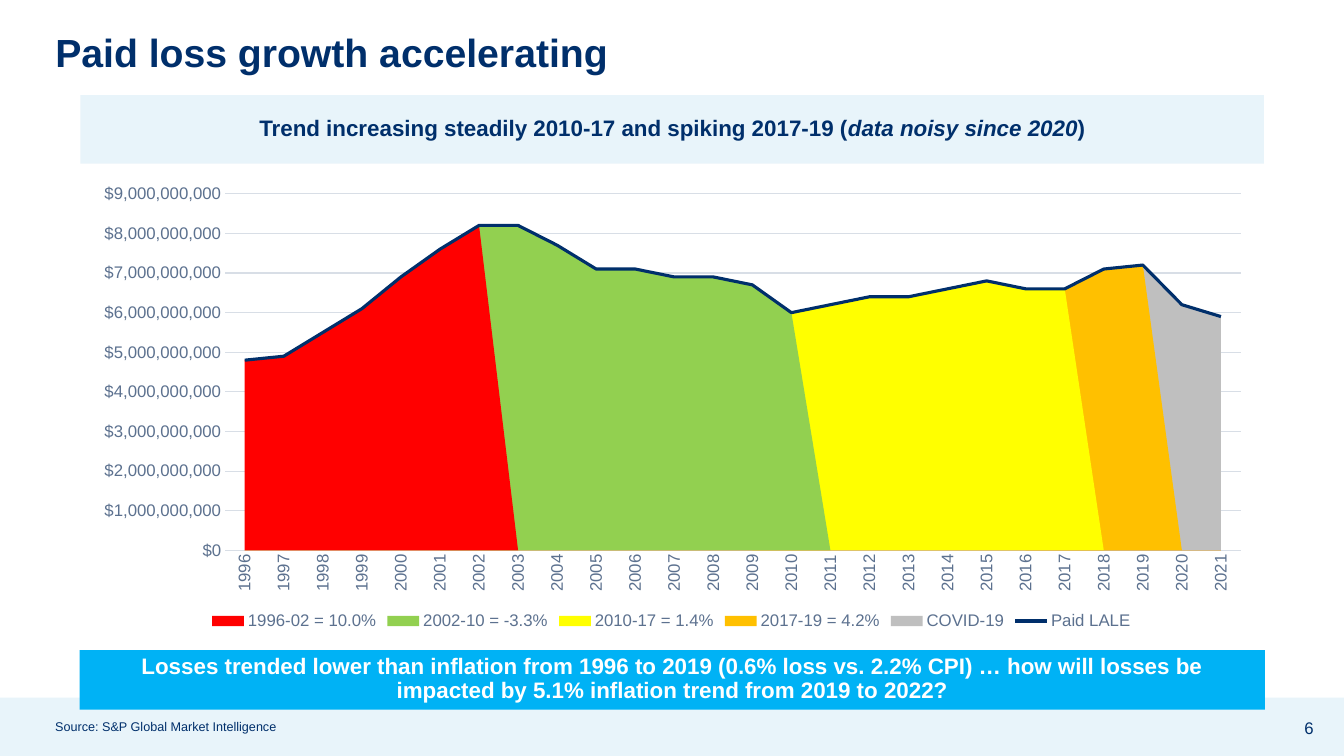
from lxml import etree
from pptx import Presentation
from pptx.chart.data import CategoryChartData
from pptx.dml.color import RGBColor
from pptx.enum.chart import XL_CHART_TYPE, XL_LEGEND_POSITION, XL_MARKER_STYLE, XL_TICK_MARK
from pptx.enum.shapes import MSO_SHAPE
from pptx.enum.text import MSO_ANCHOR, PP_ALIGN
from pptx.oxml.ns import qn
from pptx.oxml.xmlchemy import OxmlElement
from pptx.util import Pt

AREA = XL_CHART_TYPE.AREA
LEGEND_BOTTOM = XL_LEGEND_POSITION.BOTTOM
NO_MARKER = XL_MARKER_STYLE.NONE
NO_TICK = XL_TICK_MARK.NONE
RECTANGLE = MSO_SHAPE.RECTANGLE
TOP, MIDDLE = MSO_ANCHOR.TOP, MSO_ANCHOR.MIDDLE
LEFT, CENTER = PP_ALIGN.LEFT, PP_ALIGN.CENTER

NAVY = RGBColor(0x00, 0x2F, 0x6B)
PALE_BLUE = RGBColor(0xE8, 0xF4, 0xFA)
BRIGHT_BLUE = RGBColor(0x00, 0xB2, 0xF5)
WHITE = RGBColor(0xFF, 0xFF, 0xFF)
SLATE = RGBColor(0x5C, 0x71, 0x8F)
GRID_GRAY = RGBColor(0xD8, 0xDE, 0xE6)
RED = RGBColor(0xFF, 0x00, 0x00)
GREEN = RGBColor(0x92, 0xD0, 0x50)
YELLOW = RGBColor(0xFF, 0xFF, 0x00)
AMBER = RGBColor(0xFF, 0xC0, 0x00)
GRAY = RGBColor(0xBF, 0xBF, 0xBF)

FONT = "Arial"
FIRST_YEAR = 1996
BILLION = 1_000_000_000
PAID_BILLIONS = [4.8, 4.9, 5.5, 6.1, 6.9, 7.6, 8.2, 8.2, 7.7, 7.1, 7.1, 6.9, 6.9,
                 6.7, 6.0, 6.2, 6.4, 6.4, 6.6, 6.8, 6.6, 6.6, 7.1, 7.2, 6.2, 5.9]
PERIODS = [
    ("1996-02 = 10.0%", 1996, 2002, RED),
    ("2002-10 = -3.3%", 2002, 2010, GREEN),
    ("2010-17 = 1.4%", 2010, 2017, YELLOW),
    ("2017-19 = 4.2%", 2017, 2019, AMBER),
    ("COVID-19", 2019, 2021, GRAY),
]

deck = Presentation()
deck.slide_width, deck.slide_height = Pt(960), Pt(540)
page = deck.slides.add_slide(deck.slide_layouts[6])


def add_box(left, top, width, height, fill=None):
    """Add a filled rectangle, or a plain text box when there is no fill."""
    place = [Pt(length) for length in (left, top, width, height)]
    if fill is None:
        return page.shapes.add_textbox(*place)
    box = page.shapes.add_shape(RECTANGLE, *place)
    box.shadow.inherit = False
    box.fill.solid()
    box.fill.fore_color.rgb = fill
    box.line.fill.background()
    return box


def write(box, texts, size, color=NAVY, bold=False, align=LEFT, anchor=MIDDLE, spacing=0.9):
    """Write one paragraph; every second text is italic."""
    frame = box.text_frame
    frame.word_wrap = True
    frame.vertical_anchor = anchor
    para = frame.paragraphs[0]
    para.alignment = align
    para.line_spacing = spacing
    for index, text in enumerate(texts):
        span = para.add_run()
        span.text = text
        span.font.name = FONT
        span.font.size = Pt(size)
        span.font.bold = bold
        span.font.italic = index % 2 == 1
        span.font.color.rgb = color


add_box(0, 498.24, 960, 41.76, PALE_BLUE)

subtitle = add_box(57.4, 67.9, 845.5, 49, PALE_BLUE)
subtitle.text_frame.margin_left = subtitle.text_frame.margin_right = Pt(14.4)
write(subtitle, ["Trend increasing steadily 2010-17 and spiking 2017-19 (",
                 "data noisy since 2020", ")"], 16, bold=True, align=CENTER)

title = add_box(32.4, 10.8, 870.5, 56.2)
write(title, ["Paid loss growth accelerating"], 28, bold=True)

# Paid losses: one area per trend period, with the whole history as a line
paid = [round(value * BILLION) for value in PAID_BILLIONS]
years = range(FIRST_YEAR, FIRST_YEAR + len(paid))
data = CategoryChartData(number_format='"$"#,##0')
data.categories = [str(year) for year in years]
for name, start, end, color in PERIODS:
    data.add_series(name, [value if start <= year <= end else None
                           for year, value in zip(years, paid)])
data.add_series("Paid LALE", paid)
chart = page.shapes.add_chart(AREA, Pt(56.9), Pt(125.3), Pt(845.3), Pt(327.6), data).chart
chart.has_title = False
chart.font.name = FONT
chart.font.size = Pt(12)
chart.font.color.rgb = SLATE
chart.has_legend = True
chart.legend.position = LEGEND_BOTTOM
chart.legend.include_in_layout = False

# Move the last series into a line chart on the same axes
chart_xml = chart.element
area_xml = chart_xml.find(".//" + qn("c:areaChart"))
line_xml = OxmlElement("c:lineChart")
etree.SubElement(line_xml, qn("c:grouping")).set("val", "standard")
etree.SubElement(line_xml, qn("c:varyColors")).set("val", "0")
line_xml.append(area_xml.findall(qn("c:ser"))[-1])
etree.SubElement(line_xml, qn("c:marker")).set("val", "1")
for axis_id in area_xml.findall(qn("c:axId")):
    etree.SubElement(line_xml, qn("c:axId")).set("val", axis_id.get("val"))
area_xml.addnext(line_xml)

area_plot, line_plot = chart.plots
area_plot.vary_by_categories = False
for series, (name, start, end, color) in zip(area_plot.series, PERIODS):
    series.format.fill.solid()
    series.format.fill.fore_color.rgb = color
paid_line = line_plot.series[0]
paid_line.smooth = False
paid_line.marker.style = NO_MARKER
paid_line.format.line.color.rgb = NAVY
paid_line.format.line.width = Pt(2.25)

year_axis, dollar_axis = chart.category_axis, chart.value_axis
for axis in (year_axis, dollar_axis):
    axis.major_tick_mark = axis.minor_tick_mark = NO_TICK
    axis.tick_labels.font.name = FONT
    axis.tick_labels.font.size = Pt(12)
    axis.tick_labels.font.color.rgb = SLATE
year_axis.has_major_gridlines = False
dollar_axis.has_major_gridlines = True
for line in (year_axis.format.line, dollar_axis.major_gridlines.format.line):
    line.color.rgb = GRID_GRAY
    line.width = Pt(0.75)
dollar_axis.format.line.fill.background()
dollar_axis.minimum_scale = 0
dollar_axis.maximum_scale = 9 * BILLION
dollar_axis.major_unit = BILLION
dollar_axis.tick_labels.number_format = '"$"#,##0'
dollar_axis.tick_labels.number_format_is_linked = False

# Upright year labels, half a step of margin at both ends, gaps drawn as zero
year_axis_xml = chart_xml.find(".//" + qn("c:catAx"))
label_body = year_axis_xml.find(qn("c:txPr")).find(qn("a:bodyPr"))
label_body.set("rot", "-5400000")
label_body.set("vert", "horz")
chart_xml.find(".//" + qn("c:crossBetween")).set("val", "between")
chart_xml.find(".//" + qn("c:dispBlanksAs")).set("val", "zero")

plot_area = chart_xml.find(".//" + qn("c:plotArea"))
for old_layout in plot_area.findall(qn("c:layout")):
    plot_area.remove(old_layout)
layout = OxmlElement("c:layout")
manual = etree.SubElement(layout, qn("c:manualLayout"))
for tag, value in (("layoutTarget", "inner"), ("xMode", "edge"), ("yMode", "edge"),
                   ("x", "0.123"), ("y", "0.04"), ("w", "0.858"), ("h", "0.778")):
    etree.SubElement(manual, qn("c:" + tag)).set("val", value)
plot_area.insert(0, layout)

takeaway = add_box(56.9, 464.4, 846.7, 42.5, BRIGHT_BLUE)
write(takeaway, ["Losses trended lower than inflation from 1996 to 2019 (0.6% loss vs. 2.2% CPI) … "
                 "how will losses be impacted by 5.1% inflation trend from 2019 to 2022?"],
      16, WHITE, bold=True, align=CENTER, anchor=TOP)

page_number = add_box(913, 505.4, 43.9, 28.8)
write(page_number, ["6"], 12, align=CENTER, spacing=1.0)

source = add_box(32.4, 510.5, 871.2, 18)
write(source, ["Source: S&P Global Market Intelligence"], 9)

deck.save("out.pptx")
